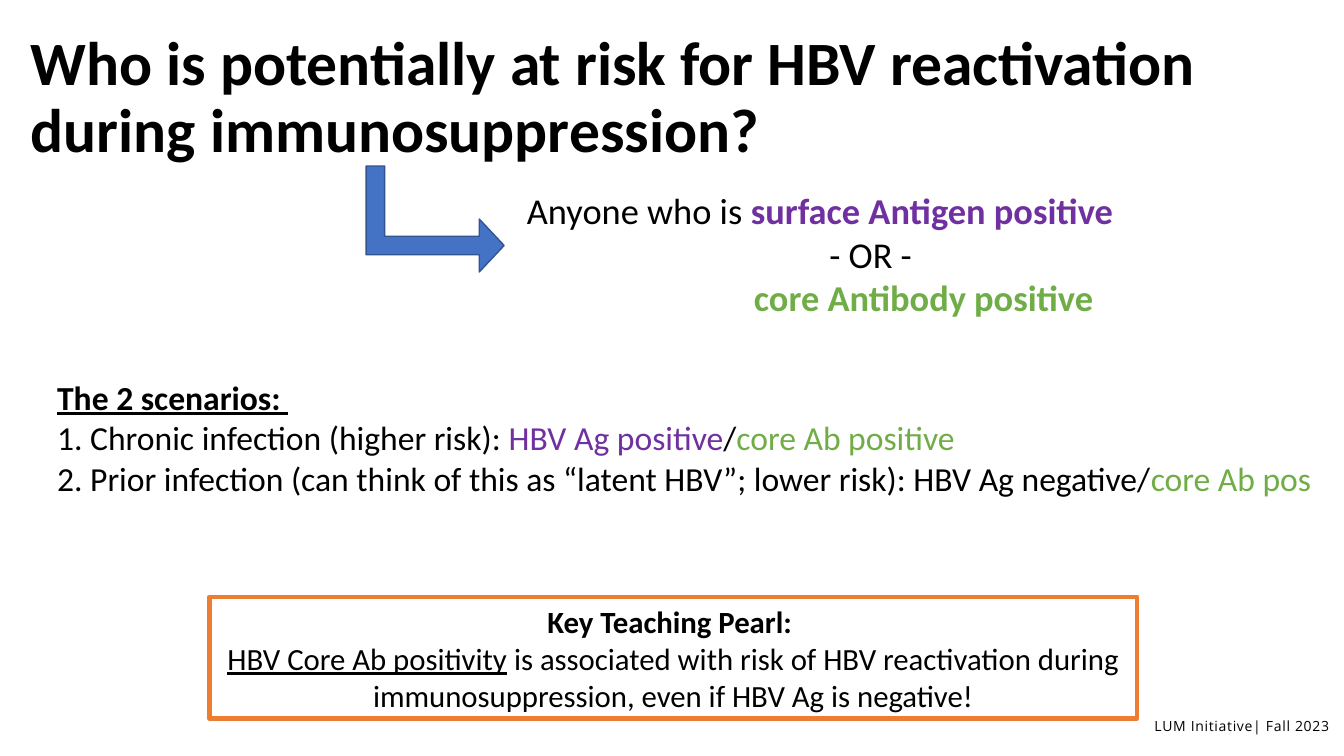
from pptx import Presentation
from pptx.dml.color import RGBColor
from pptx.enum import shapes, text
from pptx.util import Cm, Pt

HUES = {
    "black": "000000",
    "antigen": "7030A0",
    "antibody": "70AD47",
    "arrow": "4472C4",
    "edge": "325491",
    "frame": "ED7D31",
}


def hue(name):
    return RGBColor.from_string(HUES[name])


def write(shape, size, lines, font="Calibri", align=text.PP_ALIGN.LEFT):
    """Fill a shape with lines of (words, colour, style); style holds b and u."""
    frame = shape.text_frame
    frame.word_wrap = True
    for i, line in enumerate(lines):
        para = frame.paragraphs[0] if i == 0 else frame.add_paragraph()
        para.alignment = align
        para.font.size = Pt(size)
        para.font.name = font
        for words, tint, style in line:
            run = para.add_run()
            run.text = words
            run.font.color.rgb = hue(tint)
            run.font.bold = "b" in style
            run.font.underline = "u" in style
    return frame


deck = Presentation()
deck.slide_width, deck.slide_height = Cm(33.87), Cm(19.05)
slide = deck.slides.add_slide(deck.slide_layouts[6])
add = slide.shapes

# Title
title = add.add_textbox(Cm(0.53), Cm(0.66), Cm(32.8), Cm(3.68))
frame = write(title, 44, [
    [("Who is potentially at risk for HBV reactivation during immunosuppression?",
      "black", "b")],
])
frame.vertical_anchor = text.MSO_ANCHOR.MIDDLE
frame.paragraphs[0].line_spacing = 0.9

# Key teaching pearl
pearl = add.add_shape(shapes.MSO_SHAPE.RECTANGLE, Cm(5.28), Cm(15.04), Cm(23.37), Cm(3.07))
pearl.shadow.inherit = False
pearl.fill.background()
pearl.line.color.rgb = hue("frame")
pearl.line.width = Pt(3.25)
write(pearl, 22, [
    [("Key Teaching Pearl: ", "black", "b")],
    [("HBV Core Ab positivity", "black", "u"),
     (" is associated with risk of HBV reactivation during immunosuppression, "
      "even if HBV Ag is negative!", "black", "")],
], align=text.PP_ALIGN.CENTER)

# Scenarios
cases = add.add_textbox(Cm(1.19), Cm(9.37), Cm(32.8), Cm(3.33))
write(cases, 24, [
    [("The 2 scenarios: ", "black", "bu")],
    [("1. Chronic infection (higher risk): ", "black", ""),
     ("HBV Ag positive", "antigen", ""),
     ("/", "black", ""),
     ("core Ab positive", "antibody", "")],
    [("2. Prior infection (can think of this as “latent HBV”; lower risk): "
      "HBV Ag negative/", "black", ""),
     ("core Ab pos", "antibody", "")],
])

# Arrow from the title to the answer
arrow = add.add_shape(shapes.MSO_SHAPE.BENT_UP_ARROW, Cm(9.63), Cm(3.78), Cm(2.67), Cm(3.48))
arrow.rotation = 90
arrow.shadow.inherit = False
for i, ratio in enumerate((0.175, 0.25, 0.235)):
    arrow.adjustments[i] = ratio
arrow.fill.solid()
arrow.fill.fore_color.rgb = hue("arrow")
arrow.line.color.rgb = hue("edge")
arrow.line.width = Pt(1)

# Answer, with its lower lines indented
answer = add.add_textbox(Cm(13.03), Cm(4.62), Cm(20.29), Cm(3.58))
frame = write(answer, 26, [
    [("Anyone who is ", "black", ""), ("surface Antigen positive", "antigen", "b")],
    [("- OR -", "black", "")],
    [("core Antibody positive", "antibody", "b")],
])
for para, indent in zip(frame.paragraphs[1:], (7.62, 5.72)):
    para._p.get_or_add_pPr().set("marL", str(Cm(indent)))

# Footer
footer = add.add_textbox(Cm(26.9), Cm(18.08), Cm(6.6), Cm(0.43))
frame = write(footer, 10, [[("LUM Initiative| Fall 2023", "black", "")]],
              font="Open Sans", align=text.PP_ALIGN.RIGHT)
frame.margin_left = frame.margin_right = frame.margin_top = frame.margin_bottom = 0
para = frame.paragraphs[0]
para.line_spacing = Pt(12)
para.runs[0].font._element.set("spc", "50")

deck.save("out.pptx")
